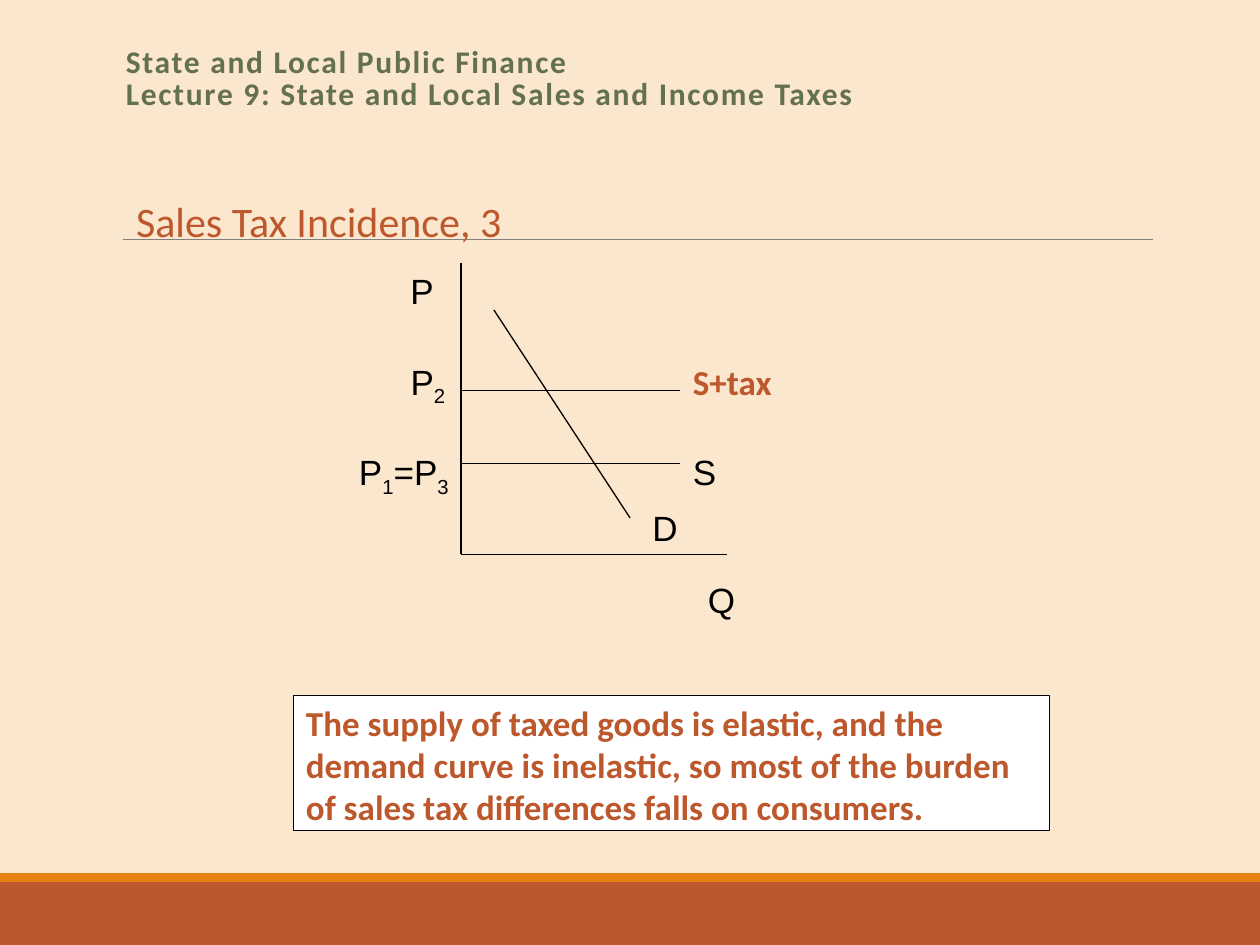
from pptx import Presentation
from pptx.dml.color import RGBColor as RGB
from pptx.enum.shapes import MSO_CONNECTOR as Conn, MSO_SHAPE as Form
from pptx.enum.text import MSO_ANCHOR as Anchor, PP_ALIGN as Align
from pptx.oxml.ns import qn
from pptx.util import Inches, Pt
from lxml.etree import SubElement

SAND = RGB(0xFB, 0xE6, 0xCE)
RUST = RGB(0xBD, 0x58, 0x2C)
AMBER = RGB(0xE4, 0x83, 0x12)
MOSS = RGB(0x63, 0x70, 0x52)
GRAY = RGB(0x80, 0x80, 0x80)
BLACK = RGB(0, 0, 0)
WHITE = RGB(0xFF, 0xFF, 0xFF)

COLS, ROWS = 100, 75
UNIT = Inches(0.1)


def cells(*nums):
    return [round(num * UNIT) for num in nums]


def style(para, size, face, color, bold=False):
    font = para.font
    font.size, font.name, font.bold = Pt(size), face, bold
    font.color.rgb = color
    para.alignment = Align.LEFT


def write(shapes, box, text, *look):
    frame = shapes.add_textbox(*cells(*box)).text_frame
    frame.word_wrap = True
    frame.vertical_anchor = Anchor.TOP
    para = frame.paragraphs[0]
    para.text = text
    style(para, *look)
    return frame


def mark(shapes, box, parts):
    para = write(shapes, box, "", 20, "Arial", BLACK).paragraphs[0]
    for text, sub in parts:
        run = para.add_run()
        run.text = text
        if sub:
            run._r.get_or_add_rPr().set("baseline", "-25000")


def rule(shapes, ends, color=BLACK, width=0.75):
    line = shapes.add_connector(Conn.STRAIGHT, *cells(*ends))
    line.line.color.rgb = color
    line.line.width = Pt(width)
    SubElement(line._element.spPr, qn("a:effectLst"))


def block(shapes, box, color):
    rect = shapes.add_shape(Form.RECTANGLE, *cells(*box))
    rect.shadow.inherit = False
    rect.fill.solid()
    rect.fill.fore_color.rgb = color
    rect.line.fill.background()
    return rect


def footer(shapes, box):
    x, y, w, h = box
    band = 0.7
    block(shapes, (x, y + band, w, h - band), RUST)
    block(shapes, (x, y, w, band), AMBER)


def header(shapes, box):
    x, y, w, h = box
    rule(shapes, (x + 0.8, y + h, x + w, y + h), GRAY, 0.5)
    text = "State and Local Public Finance\vLecture 9: State and Local Sales and Income Taxes"
    para = write(shapes, (x, y, w, 6.5), text, 18, "Calibri", MOSS, True).paragraphs[0]
    para.line_spacing = 0.85
    for run in para.runs:
        run._r.get_or_add_rPr().set("spc", "100")
    topic = write(shapes, (x + 1.8, y + 12.2, w, 4.4),
                  "Sales Tax Incidence, 3", 24, "Calibri", RUST)
    topic.margin_left = topic.margin_right = 0
    para = topic.paragraphs[0]
    para.line_spacing = 0.9
    para.space_before, para.space_after = Pt(6.8), Pt(1.1)
    props = para._p.get_or_add_pPr()
    props.set("marL", str(Inches(0.06)))
    props.set("indent", str(-Inches(0.06)))


def graph(shapes, box):
    x, y, w, h = box
    base = y + h
    low, high = y + 15.9, y + 10.1
    edge = x + 17.4
    rule(shapes, (x, y, x, base))
    rule(shapes, (x, base, x + w, base))
    for level in (low, high):
        rule(shapes, (x, level, edge, level))
    rule(shapes, (x + 2.6, y + 3.7, x + 13.4, y + 20.2))

    side, upper, lower = x - 5, y + 7.2, y + 14.4
    mark(shapes, (side, y, 3.7, 5.8), [("P", False)])
    mark(shapes, (x + 18.6, base + 1.4, 3.7, 5.8), [("Q", False)])
    mark(shapes, (edge, lower, 6.2, 4.3), [("S", False)])
    write(shapes, (edge, upper, 11.9, 4.3), "S+tax", 20, "Calibri", RUST, True)
    mark(shapes, (x + 14.2, y + 18.8, 6.2, 4.3), [("D", False)])
    mark(shapes, (x - 9.1, lower, 9.9, 4.3),
         [("P", False), ("1", True), ("=P", False), ("3", True)])
    mark(shapes, (side, upper, 9.9, 4.4), [("P", False), ("2", True)])


def note(shapes, box):
    rect = block(shapes, box, WHITE)
    rect.line.color.rgb = BLACK
    rect.line.width = Pt(0.75)
    frame = rect.text_frame
    frame.word_wrap = True
    frame.vertical_anchor = Anchor.TOP
    para = frame.paragraphs[0]
    para.text = ("The supply of taxed goods is elastic, and the demand curve is inelastic, "
                 "so most of the burden of sales tax differences falls on consumers.")
    style(para, 20, "Calibri", RUST, True)


def main():
    deck = Presentation()
    deck.slide_width, deck.slide_height = cells(COLS, ROWS)
    slide = deck.slides.add_slide(deck.slide_layouts[6])
    slide.background.fill.solid()
    slide.background.fill.fore_color.rgb = SAND
    shapes = slide.shapes
    footer(shapes, (0, ROWS - 5.7, COLS, 5.7))
    header(shapes, (9, 3.3, 82.5, 15.7))
    group = shapes.add_group_shape().shapes
    graph(group, (36.6, 20.9, 21.1, 23.1))
    note(group, (23.3, 55.2, 60, 10.7))
    deck.save("out.pptx")


if __name__ == "__main__":
    main()
